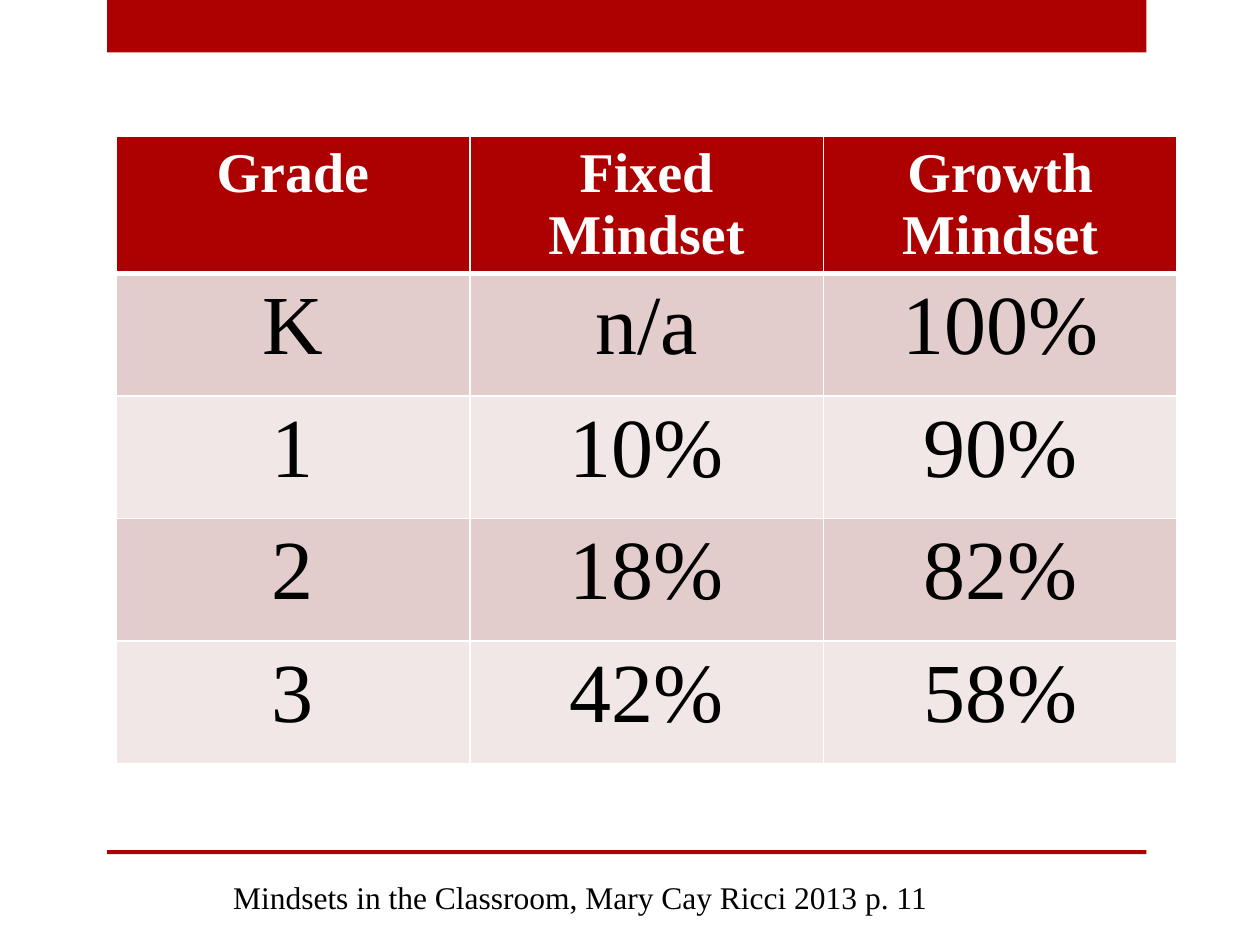
from lxml.etree import SubElement
from pptx import Presentation
from pptx.dml.color import RGBColor
from pptx.enum.shapes import MSO_SHAPE as Preset
from pptx.enum.text import MSO_AUTO_SIZE as AutoSize, PP_ALIGN as Align
from pptx.oxml.ns import qn
from pptx.util import Cm, Pt

# Content
ROWS = [
    ("Grade", "Fixed Mindset", "Growth Mindset"),
    ("K", "n/a", "100%"),
    ("1", "10%", "90%"),
    ("2", "18%", "82%"),
    ("3", "42%", "58%"),
]
CITATION = "Mindsets in the Classroom, Mary Cay Ricci 2013 p. 11"

# Style
FONT = "Times New Roman"
RED = RGBColor(0xAD, 0x01, 0x01)
ROSE = RGBColor(0xE3, 0xCC, 0xCC)
PALE_ROSE = RGBColor(0xF1, 0xE7, 0xE7)
WHITE = RGBColor(0xFF, 0xFF, 0xFF)
BLACK = RGBColor(0, 0, 0)

# Layout in centimetres: left, top, width, height
BARS = [(2.16, 0, 20.95, 1.06), (2.16, 17.14, 20.95, 0.08)]
TABLE_LEFT, TABLE_TOP = 2.34, 2.75
COLUMN_WIDTH, ROW_HEIGHT = 7.13, 2.47
CITATION_BOX = (4.45, 17.58, 17.15, 1.07)


def write_text(frame, text, size=18, color=BLACK, bold=False, align=Align.LEFT):
    paragraph = frame.paragraphs[0]
    paragraph.alignment = align
    run = paragraph.add_run()
    run.text = text
    run.font.name = FONT
    run.font.size = Pt(size)
    run.font.bold = bold
    run.font.color.rgb = color


def set_border(cell, side, width):
    properties = cell._tc.get_or_add_tcPr()
    line = SubElement(properties, qn(f"a:ln{side}"), w=str(Pt(width)))
    fill = SubElement(line, qn("a:solidFill"))
    SubElement(fill, qn("a:srgbClr"), val=str(WHITE))


def add_bar(slide, box):
    bar = slide.shapes.add_shape(Preset.RECTANGLE, *map(Cm, box))
    bar.shadow.inherit = False
    bar.fill.solid()
    bar.fill.fore_color.rgb = RED
    bar.line.fill.background()


def add_mindset_table(slide):
    row_count, column_count = len(ROWS), len(ROWS[0])
    table = slide.shapes.add_table(
        row_count, column_count, Cm(TABLE_LEFT), Cm(TABLE_TOP),
        Cm(COLUMN_WIDTH * column_count), Cm(ROW_HEIGHT * row_count)).table
    for column in table.columns:
        column.width = Cm(COLUMN_WIDTH)
    for row_index, values in enumerate(ROWS):
        table.rows[row_index].height = Cm(ROW_HEIGHT)
        header = row_index == 0
        for column_index, value in enumerate(values):
            cell = table.cell(row_index, column_index)
            # The rule under the header is thicker than the other borders
            widths = {"L": 1, "R": 1, "T": 3 if row_index == 1 else 1, "B": 3 if header else 1}
            for side, width in widths.items():
                set_border(cell, side, width)
            cell.fill.solid()
            cell.fill.fore_color.rgb = RED if header else (PALE_ROSE, ROSE)[row_index % 2]
            write_text(cell.text_frame, value, size=32 if header else 48,
                       color=WHITE if header else BLACK, bold=header, align=Align.CENTER)


def main():
    presentation = Presentation()
    presentation.slide_width, presentation.slide_height = Cm(25.4), Cm(19.05)
    slide = presentation.slides.add_slide(presentation.slide_layouts[6])

    # Red bars at the top and bottom
    for box in BARS:
        add_bar(slide, box)

    # Mindsets by grade
    add_mindset_table(slide)

    # Citation
    frame = slide.shapes.add_textbox(*map(Cm, CITATION_BOX)).text_frame
    frame.word_wrap = True
    frame.auto_size = AutoSize.SHAPE_TO_FIT_TEXT
    write_text(frame, CITATION)

    presentation.save("out.pptx")


if __name__ == "__main__":
    main()
